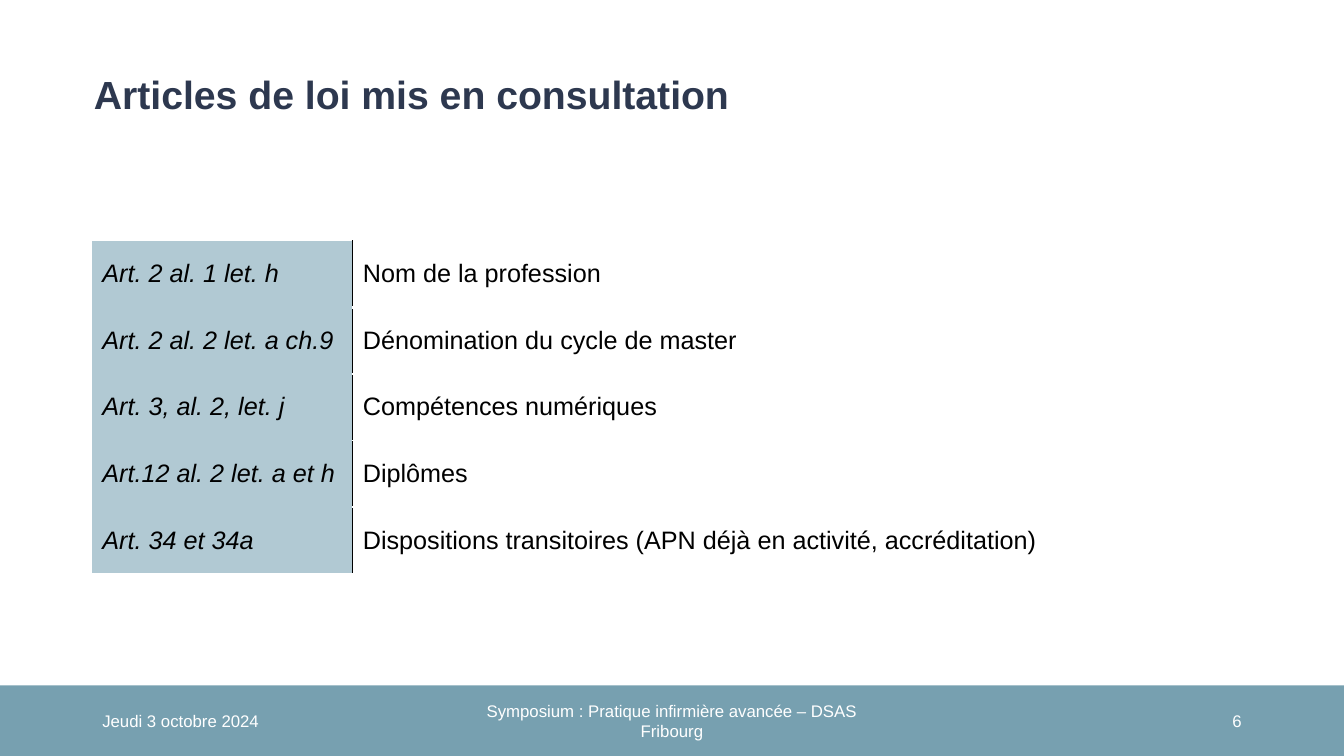
from typing import NamedTuple, Optional

from lxml import etree
from pptx import Presentation
from pptx import util as u
from pptx.dml.color import RGBColor
from pptx.enum import shapes, text
from pptx.oxml.ns import qn

WHITE = RGBColor(0xFF, 0xFF, 0xFF)
BLACK = RGBColor(0x00, 0x00, 0x00)
NAVY = RGBColor(0x2D, 0x38, 0x4F)
TEAL = RGBColor(0x77, 0xA0, 0xB0)
PALE_TEAL = RGBColor(0xB1, 0xC9, 0xD3)

FONT = "Arial"
WIDTH, HEIGHT = u.Inches(13.3333), u.Inches(7.5)
GRID_COLUMNS, GRID_ROWS = 160, 75


class Area(NamedTuple):
    column: float
    row: float
    columns: float
    rows: float


class Style(NamedTuple):
    size: int
    color: RGBColor
    bold: bool = False
    italic: bool = False


class Label(NamedTuple):
    area: Area
    wording: str
    style: Style
    align: text.PP_ALIGN = text.PP_ALIGN.LEFT
    anchor: text.MSO_ANCHOR = text.MSO_ANCHOR.MIDDLE
    line_spacing: float = 1.0


class Article(NamedTuple):
    reference: str
    subject: str


class Border(NamedTuple):
    side: str
    color: Optional[RGBColor]
    points: float = 1


TITLE = Style(28, NAVY, bold=True)
FOOTER = Style(12, WHITE)
REFERENCE = Style(18, BLACK, italic=True)
SUBJECT = Style(18, BLACK)

FOOTER_BAND = Area(0, 68, GRID_COLUMNS, 7)
LABELS = [
    Label(Area(10, 7, 141.6, 4.2), "Articles de loi mis en consultation", TITLE,
          anchor=text.MSO_ANCHOR.TOP, line_spacing=0.9),
    Label(Area(11, 69.5, 36, 4), "Jeudi 3 octobre 2024", FOOTER),
    Label(Area(53, 69.5, 54, 4), "Symposium : Pratique infirmière avancée – DSAS Fribourg",
          FOOTER, text.PP_ALIGN.CENTER),
    Label(Area(113, 69.5, 36, 4), "6", FOOTER, text.PP_ALIGN.RIGHT),
]

ARTICLES = [
    Article("Art. 2 al. 1 let. h", "Nom de la profession"),
    Article("Art. 2 al. 2 let. a ch.9", "Dénomination du cycle de master"),
    Article("Art. 3, al. 2, let. j", "Compétences numériques"),
    Article("Art.12 al. 2 let. a et h", "Diplômes"),
    Article("Art. 34 et 34a", "Dispositions transitoires (APN déjà en activité, accréditation)"),
]
TABLE_COLUMNS = (31, 109.8)
TABLE_ROW = 6.6
TABLE_AREA = Area(11, 23.9, sum(TABLE_COLUMNS), TABLE_ROW * len(ARTICLES))

REFERENCE_BORDERS = [Border("L", None), Border("R", BLACK), Border("T", None), Border("B", None)]


def across(columns: float) -> int:
    return round(WIDTH * columns / GRID_COLUMNS)


def down(rows: float) -> int:
    return round(HEIGHT * rows / GRID_ROWS)


def place(area: Area) -> tuple[int, int, int, int]:
    return across(area.column), down(area.row), across(area.columns), down(area.rows)


def add_run(paragraph, wording: str, style: Style) -> None:
    run = paragraph.add_run()
    run.text = wording
    run.font.name = FONT
    run.font.size = u.Pt(style.size)
    run.font.bold = style.bold
    run.font.italic = style.italic
    run.font.color.rgb = style.color


def draw_band(slide, area: Area, color: RGBColor) -> None:
    band = slide.shapes.add_shape(shapes.MSO_SHAPE.RECTANGLE, *place(area))
    band.shadow.inherit = False
    band.fill.solid()
    band.fill.fore_color.rgb = color
    band.line.fill.background()


def draw_label(slide, label: Label) -> None:
    frame = slide.shapes.add_textbox(*place(label.area)).text_frame
    frame.word_wrap = True
    frame.vertical_anchor = label.anchor
    paragraph = frame.paragraphs[0]
    paragraph.alignment = label.align
    paragraph.line_spacing = label.line_spacing
    add_run(paragraph, label.wording, label.style)


def draw_border(cell, border: Border) -> None:
    properties = cell._tc.get_or_add_tcPr()
    line = etree.SubElement(properties, qn(f"a:ln{border.side}"), w=str(u.Pt(border.points)))
    if border.color is None:
        etree.SubElement(line, qn("a:noFill"))
    else:
        fill = etree.SubElement(line, qn("a:solidFill"))
        etree.SubElement(fill, qn("a:srgbClr"), val=str(border.color))


def draw_cell(cell, wording: str, style: Style, fill: RGBColor, borders: list[Border]) -> None:
    for border in borders:
        draw_border(cell, border)
    cell.fill.solid()
    cell.fill.fore_color.rgb = fill
    cell.vertical_anchor = text.MSO_ANCHOR.MIDDLE
    add_run(cell.text_frame.paragraphs[0], wording, style)


def draw_articles(slide) -> None:
    table = slide.shapes.add_table(len(ARTICLES), len(TABLE_COLUMNS), *place(TABLE_AREA)).table
    table.first_row = False
    table.horz_banding = False
    for column, columns in zip(table.columns, TABLE_COLUMNS):
        column.width = across(columns)
    for index, article in enumerate(ARTICLES):
        table.rows[index].height = down(TABLE_ROW)
        subject_borders = [Border("L", BLACK), Border("R", WHITE), Border("T", WHITE),
                           Border("B", WHITE, 3 if index == 0 else 1)]
        draw_cell(table.cell(index, 0), article.reference, REFERENCE, PALE_TEAL, REFERENCE_BORDERS)
        draw_cell(table.cell(index, 1), article.subject, SUBJECT, WHITE, subject_borders)


def main() -> None:
    presentation = Presentation()
    presentation.slide_width, presentation.slide_height = WIDTH, HEIGHT
    slide = presentation.slides.add_slide(presentation.slide_layouts[6])
    draw_band(slide, FOOTER_BAND, TEAL)
    for label in LABELS:
        draw_label(slide, label)
    draw_articles(slide)
    presentation.save("out.pptx")


if __name__ == "__main__":
    main()
